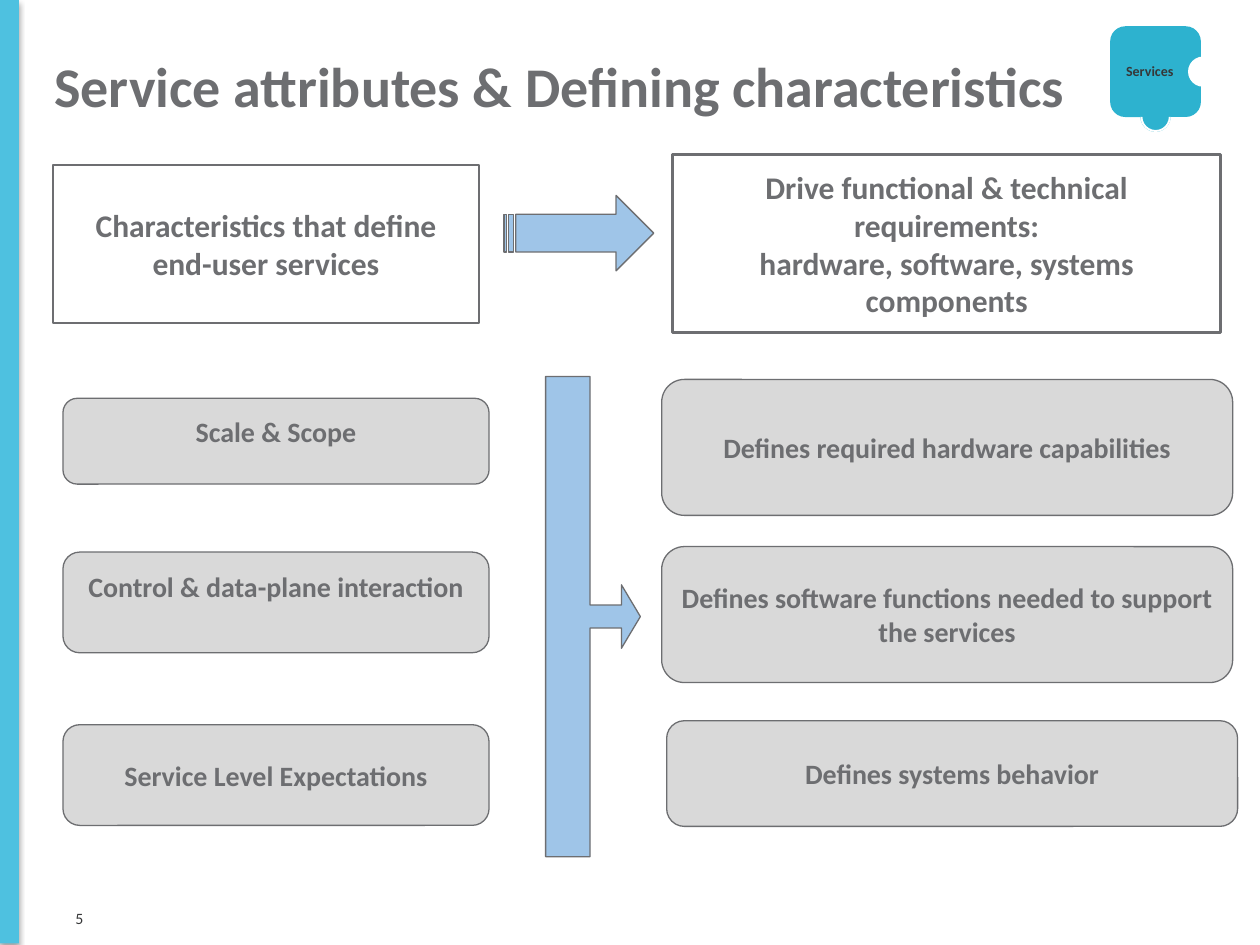
from lxml import etree
from pptx import Presentation
from pptx.dml.color import RGBColor
from pptx.enum.shapes import MSO_SHAPE as Shape
from pptx.enum.text import MSO_ANCHOR as Anchor, MSO_AUTO_SIZE as AutoSize, PP_ALIGN as Align
from pptx.oxml.ns import qn
from pptx.util import Cm, Pt

GRAY, CARD, ARROW, TEAL, BAR = "6D6E71", "D9D9D9", "9FC5E8", "2DB2CF", "4EC1E0"
WHITE, DARK = "FFFFFF", "363738"


def color(value):
    return RGBColor.from_string(value)


def write(holder, paragraphs, size, ink=GRAY, bold=True, align=Align.CENTER,
          anchor=Anchor.MIDDLE, inset=0.25):
    frame = holder.text_frame
    frame.text = "\n".join(paragraphs)
    frame.word_wrap = True
    frame.auto_size = AutoSize.NONE
    frame.vertical_anchor = anchor
    frame.margin_left = frame.margin_right = Cm(0.25)
    frame.margin_top = frame.margin_bottom = Cm(inset)
    for paragraph in frame.paragraphs:
        paragraph.alignment = align
        font = paragraph.font
        font.name, font.size, font.bold = "Calibri", Pt(size), bold
        font.color.rgb = color(ink)


def draw(slide, kind, box, fill=None, line_width=None, adjustments=()):
    part = slide.shapes.add_shape(kind, *map(Cm, box))
    part.shadow.inherit = False
    if fill:
        part.fill.solid()
        part.fill.fore_color.rgb = color(fill)
    else:
        part.fill.background()
    if line_width:
        part.line.color.rgb = color(GRAY)
        part.line.width = Pt(line_width)
    else:
        part.line.fill.background()
    for index, value in enumerate(adjustments):
        part.adjustments[index] = value
    return part


def side_bar(slide, box):
    bar = draw(slide, Shape.RECTANGLE, box, BAR)
    effects = bar._element.spPr.find(qn("a:effectLst"))
    shadow = etree.SubElement(effects, qn("a:outerShdw"), blurRad=str(Pt(3.1)),
                              dist=str(Pt(1.8)), dir="5400000", rotWithShape="0")
    tint = etree.SubElement(shadow, qn("a:srgbClr"), val="000000")
    etree.SubElement(tint, qn("a:alpha"), val="35000")


def heading(slide, box, words):
    title = slide.shapes.title
    title.left, title.top, title.width, title.height = map(Cm, box)
    write(title, [words], 32, align=Align.LEFT)


def header_box(slide, box, paragraphs):
    write(draw(slide, Shape.RECTANGLE, box, line_width=1.5), paragraphs, 18)


def card_column(slide, box, cards):
    left, top, width = box
    for words, shift, drop, height, anchor in cards:
        card = draw(slide, Shape.ROUNDED_RECTANGLE,
                    (left + shift, top + drop, width, height), CARD, 0.75)
        write(card, [words], 16, anchor=anchor)


def services_badge(slide, box):
    left, top, side = box
    knob = side / 3
    tab = (left + 0.61, top + 1.52, knob, knob)
    draw(slide, Shape.ROUNDED_RECTANGLE, (left, top, side, side), TEAL)
    draw(slide, Shape.OVAL, (left + 1.57, top + 0.61, knob, knob), WHITE)
    draw(slide, Shape.OVAL, tab, TEAL)
    rim = draw(slide, Shape.BLOCK_ARC, tab, WHITE, adjustments=(108, 0, 0.064))
    rim.rotation = 180
    label = slide.shapes.add_textbox(*map(Cm, (left - 0.23, top + 0.53, 2.06, 0.76)))
    write(label, ["Services"], 8, DARK, inset=0.13)


def page_number(slide, box, number):
    label = slide.shapes.add_textbox(*map(Cm, box))
    write(label, [number], 9, DARK, bold=False, align=Align.LEFT, inset=0.13)


def main():
    deck = Presentation()
    deck.slide_width, deck.slide_height = Cm(25.4), Cm(19.05)
    slide = deck.slides.add_slide(deck.slide_layouts[5])

    side_bar(slide, (0, 0, 0.38, 19.02))
    heading(slide, (0.84, 0.13, 22.86, 3.18), "Service attributes & Defining characteristics")
    header_box(slide, (1.07, 3.33, 8.59, 3.18),
               ["Characteristics that define end-user services"])
    header_box(slide, (13.56, 3.12, 11.05, 3.58),
               ["Drive functional & technical requirements:",
                "hardware, software, systems components"])
    card_column(slide, (1.27, 8.03, 8.59), [
        ("Scale & Scope", 0, 0, 1.73, Anchor.TOP),
        ("Control & data-plane interaction", 0, 3.1, 2.03, Anchor.TOP),
        ("Service Level Expectations", 0, 6.58, 2.03, Anchor.MIDDLE),
    ])
    card_column(slide, (13.34, 7.65, 11.51), [
        ("Defines required hardware capabilities", 0, 0, 2.74, Anchor.MIDDLE),
        ("Defines software functions needed to support the services",
         0, 3.37, 2.74, Anchor.MIDDLE),
        ("Defines systems behavior", 0.1, 6.88, 2.13, Anchor.MIDDLE),
    ])
    services_badge(slide, (22.38, 0.53, 1.83))
    draw(slide, Shape.RIGHT_ARROW_CALLOUT, (11, 7.59, 1.91, 9.68), ARROW, 0.75,
         (0.241, 0.335, 0.2, 0.469))
    draw(slide, Shape.STRIPED_RIGHT_ARROW, (10.16, 3.94, 3.02, 1.52), ARROW, 0.75)
    page_number(slide, (1.27, 18.01, 1.24, 1.02), "5")

    deck.save("out.pptx")


if __name__ == "__main__":
    main()
